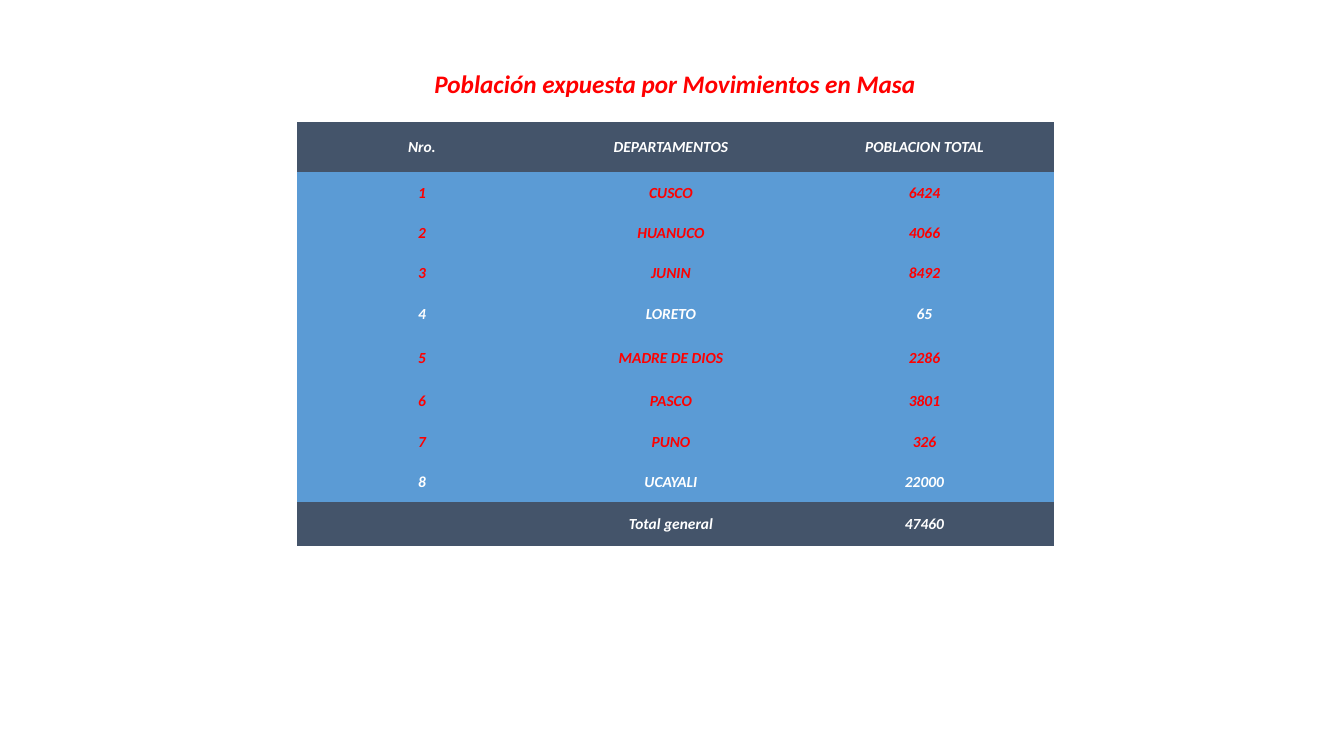
from dataclasses import dataclass

from pptx import Presentation
from pptx.dml.color import RGBColor
from pptx.enum.text import MSO_ANCHOR, MSO_AUTO_SIZE, PP_ALIGN
from pptx.oxml.ns import qn
from pptx.util import Inches, Pt

FONT = "Calibri"
RED, WHITE, SLATE, BLUE = "FF0000", "FFFFFF", "44546A", "5B9BD5"
NO_GRID_STYLE = "{2D5ABB26-0587-4C30-8999-92F81FD0307C}"
COLUMN_WIDTHS = (2.47, 2.47, 2.56)


@dataclass
class Row:
    texts: tuple[str, str, str]
    color: str = WHITE
    fill: str = BLUE
    height: float = 0.4


@dataclass
class Department:
    name: str
    population: int
    color: str = RED
    height: float = 0.4


DEPARTMENTS = [
    Department("CUSCO", 6424),
    Department("HUANUCO", 4066),
    Department("JUNIN", 8492),
    Department("LORETO", 65, WHITE),
    Department("MADRE DE DIOS", 2286, height=0.47),
    Department("PASCO", 3801),
    Department("PUNO", 326),
    Department("UCAYALI", 22000, WHITE),
]


def rgb(color: str) -> RGBColor:
    return RGBColor.from_string(color)


def write(tf, text: str, size: float, color: str) -> None:
    tf.text = text
    p = tf.paragraphs[0]
    p.alignment = PP_ALIGN.CENTER
    for r in p.runs:
        r.font.name = FONT
        r.font.size = Pt(size)
        r.font.bold = r.font.italic = True
        r.font.color.rgb = rgb(color)


def table_rows() -> list[Row]:
    total = sum(d.population for d in DEPARTMENTS)
    header = Row(("Nro.", "DEPARTAMENTOS", "POBLACION TOTAL"), fill=SLATE, height=0.5)
    body = [Row((str(n), d.name, str(d.population)), d.color, height=d.height)
            for n, d in enumerate(DEPARTMENTS, 1)]
    footer = Row(("", "Total general", str(total)), fill=SLATE, height=0.44)
    return [header, *body, footer]


def add_title(s) -> None:
    tf = s.shapes.add_textbox(Inches(4.18), Inches(0.63), Inches(5.03), Inches(0.4)).text_frame
    tf.word_wrap = False
    tf.auto_size = MSO_AUTO_SIZE.SHAPE_TO_FIT_TEXT
    write(tf, "Población expuesta por Movimientos en Masa", 18, RED)


def add_population_table(s, rows: list[Row]) -> None:
    frame = s.shapes.add_table(
        len(rows), len(COLUMN_WIDTHS), Inches(2.95), Inches(1.21),
        Inches(sum(COLUMN_WIDTHS)), Inches(sum(row.height for row in rows)))
    table = frame.table
    table.horz_banding = False
    # Style without grid lines
    table._tbl.tblPr.find(qn("a:tableStyleId")).text = NO_GRID_STYLE
    for column, width in zip(table.columns, COLUMN_WIDTHS):
        column.width = Inches(width)
    for i, row in enumerate(rows):
        table.rows[i].height = Inches(row.height)
        for cell, text in zip(table.rows[i].cells, row.texts):
            cell.fill.solid()
            cell.fill.fore_color.rgb = rgb(row.fill)
            cell.vertical_anchor = MSO_ANCHOR.MIDDLE
            cell.margin_left = cell.margin_right = cell.margin_top = Inches(0.01)
            cell.margin_bottom = 0
            write(cell.text_frame, text, 11, row.color)


def main() -> None:
    prs = Presentation()
    prs.slide_width, prs.slide_height = Inches(13.33), Inches(7.5)
    s = prs.slides.add_slide(prs.slide_layouts[6])
    # Title above the table
    add_title(s)
    # Exposed population by department
    add_population_table(s, table_rows())
    prs.save("out.pptx")


if __name__ == "__main__":
    main()
